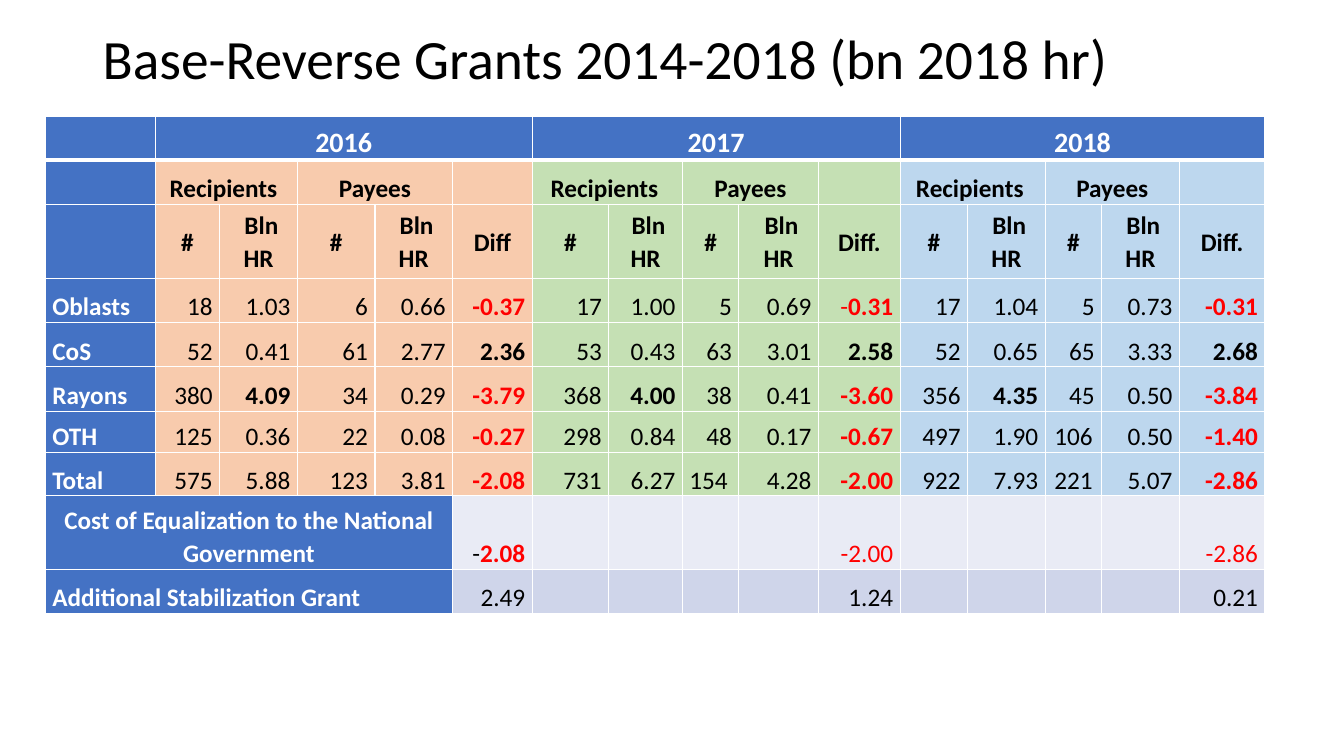
import pptx
import pptx.dml.color
import pptx.enum.text
import pptx.oxml
import pptx.oxml.ns
import pptx.util
from dataclasses import dataclass

Inches, Pt = pptx.util.Inches, pptx.util.Pt
ALIGN = pptx.enum.text.PP_ALIGN
ANCHOR = pptx.enum.text.MSO_ANCHOR

TITLE = "Base-Reverse Grants 2014-2018 (bn 2018 hr)"
YEARS = ["2016", "2017", "2018"]
GROUPS = ["Recipients ", "", "Payees", "", ""]
MEASURES = ["#", " Bln HR", "#", " Bln HR"]
DIFF_HEADS = ["Diff", "Diff.", "Diff."]
GRANTS = [
    ("Oblasts", "18 1.03 6 0.66 -0.37", "17 1.00 5 0.69 -0.31", "17 1.04 5 0.73 -0.31"),
    ("CoS", "52 0.41 61 2.77 2.36", "53 0.43 63 3.01 2.58", "52 0.65 65 3.33 2.68"),
    ("Rayons", "380 4.09 34 0.29 -3.79", "368 4.00 38 0.41 -3.60", "356 4.35 45 0.50 -3.84"),
    ("OTH", "125 0.36 22 0.08 -0.27", "298 0.84 48 0.17 -0.67", "497 1.90 106 0.50 -1.40"),
    ("Total", "575 5.88 123 3.81 -2.08", "731 6.27 154 4.28 -2.00", "922 7.93 221 5.07 -2.86"),
]
SUMMARIES = [
    ("Cost of Equalization to the National Government", ["-2.08", "-2.00", "-2.86"]),
    ("Additional Stabilization Grant", ["2.49", "1.24", "0.21"]),
]
PAYEE_ALIGNMENTS = {("OTH", "2018"): ALIGN.CENTER, ("Total", "2018"): ALIGN.CENTER,
                    ("Total", "2017"): ALIGN.LEFT}

COLUMN_WIDTHS = [1.09, 0.64, 0.77, 0.77, 0.77, 0.79, 0.76, 0.73,
                 0.56, 0.79, 0.81, 0.67, 0.77, 0.56, 0.77, 0.85]
ROW_HEIGHTS = [0.44, 0.44, 0.73, 0.44, 0.44, 0.44, 0.41, 0.43, 0.73, 0.44]
YEAR_SPAN = len(GROUPS)
FIRST_GRANT_ROW = 3
FIRST_SUMMARY_ROW = FIRST_GRANT_ROW + len(GRANTS)


@dataclass(frozen=True)
class Theme:
    font: str = "Calibri"
    title_size: float = 39.6
    year_size: float = 20
    body_size: float = 18
    ink: str = "000000"
    white: str = "FFFFFF"
    negative: str = "FF0000"
    header: str = "4472C4"
    years: tuple = ("F8CBAD", "C5E0B4", "BDD7EE")
    summaries: tuple = ("E9EBF5", "CFD5EA")


THEME = Theme()


def rgb(value):
    return pptx.dml.color.RGBColor.from_string(value)


def style_run(run, size, color, bold=False):
    run.font.name = THEME.font
    run.font.size = Pt(size)
    run.font.bold = bold
    run.font.color.rgb = rgb(color)


def prepare_cell(cell, row, fill):
    """Give the cell its margins, white borders and fill."""
    cell.margin_left = cell.margin_right = Inches(0.07)
    cell.margin_top = cell.margin_bottom = 0
    properties = cell._tc.get_or_add_tcPr()
    thick_side = {0: "B", 1: "T"}.get(row)
    for side in "LRTB":
        width = Pt(3 if side == thick_side else 1)
        properties.append(pptx.oxml.parse_xml(
            f'<a:ln{side} {pptx.oxml.ns.nsdecls("a")} w="{width}"><a:solidFill>'
            f'<a:srgbClr val="{THEME.white}"/></a:solidFill></a:ln{side}>'))
    cell.fill.solid()
    cell.fill.fore_color.rgb = rgb(fill)


def write(cell, runs, align, anchor=ANCHOR.BOTTOM, size=THEME.body_size):
    """Fill a cell with (text, color, bold) runs."""
    cell.vertical_anchor = anchor
    paragraph = cell.text_frame.paragraphs[0]
    paragraph.alignment = align
    paragraph.line_spacing = 1.07
    for text, color, bold in runs:
        run = paragraph.add_run()
        run.text = text
        style_run(run, size, color, bold)


def cell_fill(row, column):
    if row >= FIRST_SUMMARY_ROW and column >= YEAR_SPAN:
        return THEME.summaries[row - FIRST_SUMMARY_ROW]
    if row == 0 or column == 0 or row >= FIRST_SUMMARY_ROW:
        return THEME.header
    return THEME.years[(column - 1) // YEAR_SPAN]


def grant_runs(label, year, position, value):
    is_diff = position == YEAR_SPAN - 1
    color = THEME.negative if value.startswith("-") else THEME.ink
    if is_diff and (label, year) == ("Oblasts", "2017"):
        return [("-", color, False), (value[1:], color, True)]
    return [(value, color, is_diff or (label == "Rayons" and position == 1))]


def summary_runs(year, value):
    if not value.startswith("-"):
        return [(value, THEME.ink, False)]
    if year == YEARS[0]:
        return [("-", THEME.ink, False), (value[1:], THEME.negative, True)]
    return [(value, THEME.negative, False)]


def add_title(slide):
    title = slide.shapes.add_textbox(Inches(0.92), Inches(0.4), Inches(11.5), Inches(0.43))
    frame = title.text_frame
    frame.word_wrap = True
    frame.vertical_anchor = ANCHOR.MIDDLE
    frame.text = TITLE
    frame.paragraphs[0].line_spacing = 0.9
    style_run(frame.paragraphs[0].runs[0], THEME.title_size, THEME.ink)


def write_year_headers(table):
    for index, year in enumerate(YEARS):
        first = 1 + index * YEAR_SPAN
        write(table.cell(0, first), [(year, THEME.white, True)], ALIGN.CENTER, size=THEME.year_size)
        table.cell(0, first).merge(table.cell(0, first + YEAR_SPAN - 1))
        for offset, group in enumerate(GROUPS):
            if group:
                head = table.cell(1, first + offset)
                write(head, [(group, THEME.ink, True)], ALIGN.CENTER)
                head.merge(table.cell(1, first + offset + 1))
        for offset, measure in enumerate(MEASURES + [DIFF_HEADS[index]]):
            write(table.cell(2, first + offset), [(measure, THEME.ink, True)],
                  ALIGN.CENTER, ANCHOR.MIDDLE)


def write_grants(table):
    for row, (label, *year_values) in enumerate(GRANTS, FIRST_GRANT_ROW):
        write(table.cell(row, 0), [(label, THEME.white, True)], ALIGN.LEFT)
        for index, (year, values) in enumerate(zip(YEARS, year_values)):
            for position, value in enumerate(values.split()):
                align = ALIGN.RIGHT
                if position == 2:
                    align = PAYEE_ALIGNMENTS.get((label, year), align)
                write(table.cell(row, 1 + index * YEAR_SPAN + position),
                      grant_runs(label, year, position, value), align)


def write_summaries(table):
    alignments = [ALIGN.CENTER, ALIGN.LEFT]
    for row, ((label, values), align) in enumerate(zip(SUMMARIES, alignments), FIRST_SUMMARY_ROW):
        write(table.cell(row, 0), [(label, THEME.white, True)], align)
        table.cell(row, 0).merge(table.cell(row, YEAR_SPAN - 1))
        for index, (year, value) in enumerate(zip(YEARS, values), 1):
            write(table.cell(row, index * YEAR_SPAN), summary_runs(year, value), ALIGN.RIGHT)


def add_grants_table(slide):
    table = slide.shapes.add_table(
        len(ROW_HEIGHTS), len(COLUMN_WIDTHS), Inches(0.45), Inches(1.15),
        Inches(sum(COLUMN_WIDTHS)), Inches(sum(ROW_HEIGHTS))).table
    table.first_row = table.horz_banding = False
    for column, width in zip(table.columns, COLUMN_WIDTHS):
        column.width = Inches(width)
    for row, height in enumerate(ROW_HEIGHTS):
        table.rows[row].height = Inches(height)
        for column in range(len(COLUMN_WIDTHS)):
            prepare_cell(table.cell(row, column), row, cell_fill(row, column))
    write_year_headers(table)
    write_grants(table)
    write_summaries(table)


def main():
    deck = pptx.Presentation()
    deck.slide_width, deck.slide_height = Inches(13.33), Inches(7.5)
    slide = deck.slides.add_slide(deck.slide_layouts[6])
    add_title(slide)
    add_grants_table(slide)
    deck.save("out.pptx")


if __name__ == "__main__":
    main()
